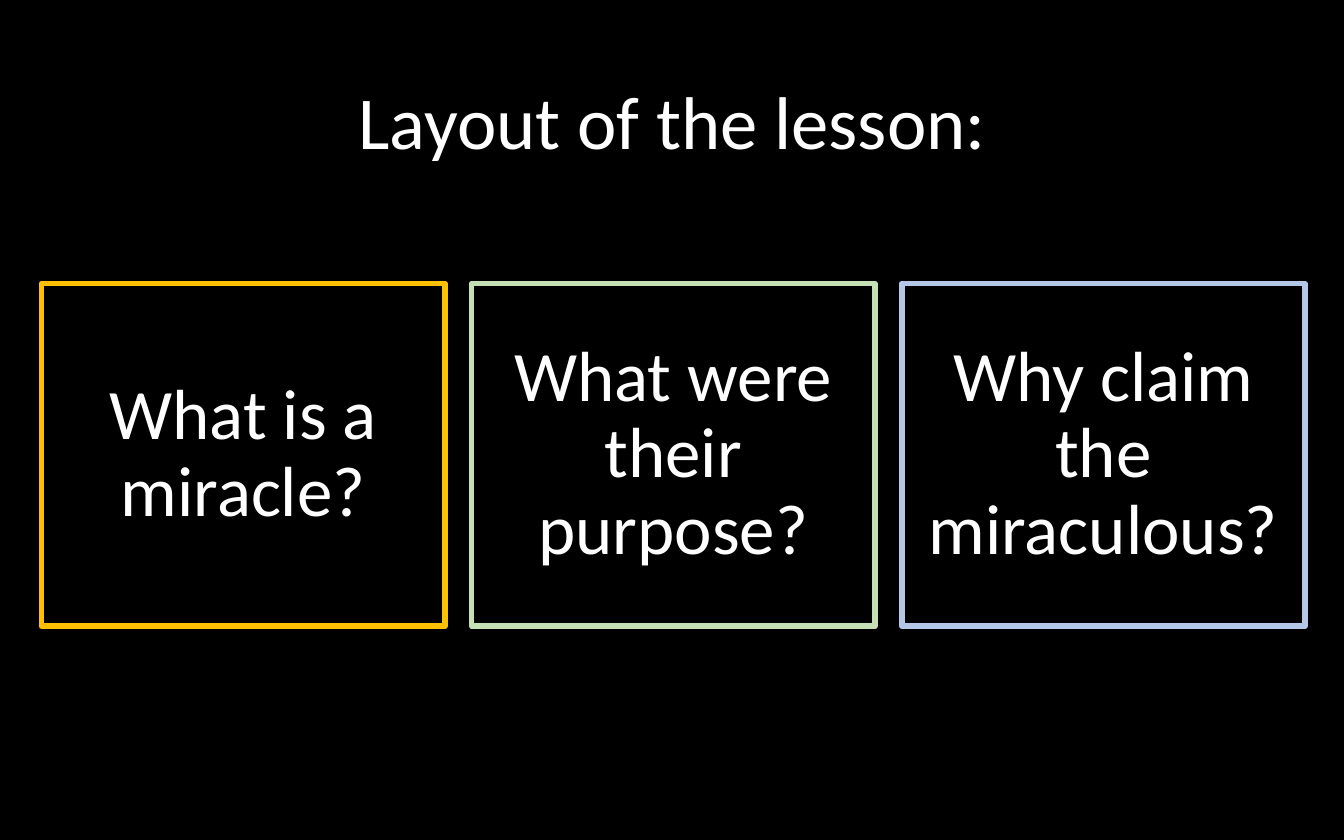
from dataclasses import dataclass

from pptx import Presentation
from pptx.dml.color import RGBColor
from pptx.enum.shapes import MSO_SHAPE
from pptx.enum.text import MSO_ANCHOR, PP_ALIGN
from pptx.util import Inches, Pt

RECTANGLE = MSO_SHAPE.RECTANGLE
MIDDLE = MSO_ANCHOR.MIDDLE
CENTER = PP_ALIGN.CENTER


@dataclass(frozen=True)
class Theme:
    font: str = "Calibri"
    background: str = "000000"
    text: str = "FFFFFF"
    gold: str = "FFC000"
    green: str = "C5E0B4"
    blue: str = "B4C7E7"
    title_size: float = 40
    card_size: float = 38
    border: float = 3


THEME = Theme()

# Row of question cards
CARD_LEFT, CARD_TOP = 0.31, 2.11
CARD_WIDTH, CARD_HEIGHT = 3, 2.55
CARD_GAP = 0.2
QUESTIONS = [
    ("What is a miracle?", THEME.gold),
    ("What were their purpose?", THEME.green),
    ("Why claim the miraculous?", THEME.blue),
]


def write_text(shape, text, *, size, color=THEME.text, space_before=0):
    frame = shape.text_frame
    frame.word_wrap = True
    frame.vertical_anchor = MIDDLE
    para = frame.paragraphs[0]
    para.alignment = CENTER
    para.line_spacing = 0.9
    para.space_before = Pt(space_before)
    span = para.add_run()
    span.text = text
    span.font.name = THEME.font
    span.font.size = Pt(size)
    span.font.color.rgb = RGBColor.from_string(color)


def add_title(page, text):
    box = page.shapes.add_textbox(
        Inches(0.69), Inches(0.33), Inches(8.62), Inches(1.21))
    write_text(box, text, size=THEME.title_size)


def add_card(page, left, text, color):
    card = page.shapes.add_shape(
        RECTANGLE, Inches(left), Inches(CARD_TOP),
        Inches(CARD_WIDTH), Inches(CARD_HEIGHT))
    card.shadow.inherit = False
    card.fill.background()
    card.line.color.rgb = RGBColor.from_string(color)
    card.line.width = Pt(THEME.border)
    write_text(card, text, size=THEME.card_size, space_before=7.5)


def main():
    deck = Presentation()
    deck.slide_width, deck.slide_height = Inches(10), Inches(6.25)
    page = deck.slides.add_slide(deck.slide_layouts[6])

    # Background
    fill = page.background.fill
    fill.solid()
    fill.fore_color.rgb = RGBColor.from_string(THEME.background)

    # Title and cards
    add_title(page, "Layout of the lesson:")
    for index, (question, color) in enumerate(QUESTIONS):
        left = CARD_LEFT + index * (CARD_WIDTH + CARD_GAP)
        add_card(page, left, question, color)

    deck.save("out.pptx")


if __name__ == "__main__":
    main()
